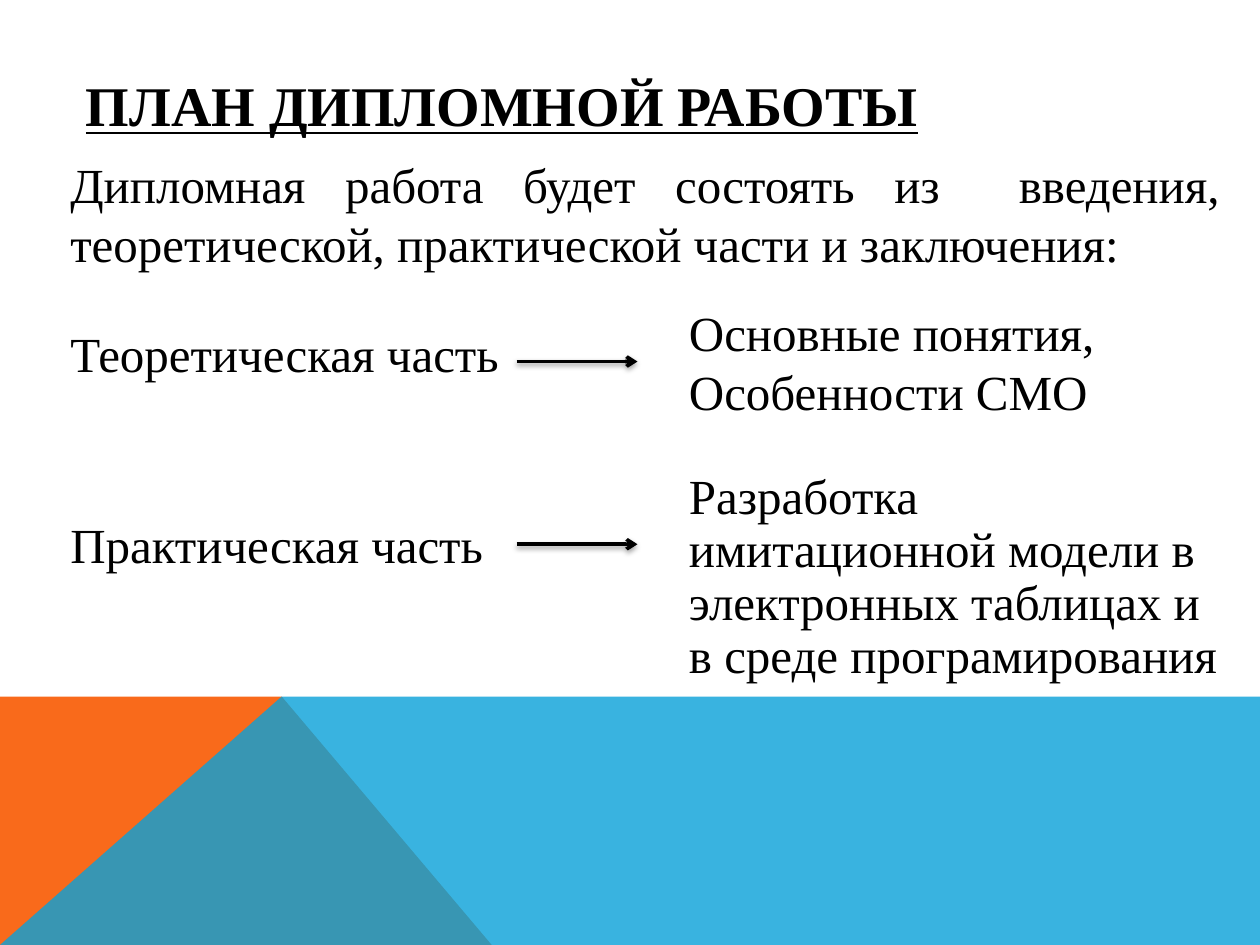
from lxml.etree import SubElement
from pptx import Presentation
from pptx.dml.color import RGBColor
from pptx.enum.shapes import MSO_CONNECTOR as CONNECTOR
from pptx.enum.text import MSO_ANCHOR as ANCHOR, MSO_AUTO_SIZE as AUTO_SIZE, PP_ALIGN as ALIGN
from pptx.oxml.ns import qn
from pptx.util import Pt

COLORS = {"text": "000000", "orange": "F96A1B", "blue": "08A1D9"}
FONT = "Times New Roman"
WIDTH, HEIGHT = 720, 540
BAND_TOP, PEAK_X = 397.5, 160.7
LEFT_X, RIGHT_X = 33.1, 386.6
ARROW_START, ARROW_END = 295.2, 364.3


def color(name):
    return RGBColor.from_string(COLORS[name])


def add_polygon(slide, points, fill, opacity=100):
    builder = slide.shapes.build_freeform(*points[0], scale=Pt(1))
    builder.add_line_segments(points[1:], close=True)
    shape = builder.convert_to_shape()
    shape.shadow.inherit = False
    shape.line.fill.background()
    shape.fill.solid()
    shape.fill.fore_color.rgb = color(fill)
    if opacity < 100:
        fill_color = shape.fill._xPr.find(qn("a:solidFill"))[0]
        SubElement(fill_color, qn("a:alpha"), val=str(opacity * 1000))


def place_text(shape, text, box, size=28, align=ALIGN.LEFT, spacing=None, anchor=ANCHOR.TOP):
    shape.left, shape.top, shape.width, shape.height = map(Pt, box)
    frame = shape.text_frame
    frame.text = text
    frame.word_wrap = True
    frame.auto_size = AUTO_SIZE.NONE
    frame.vertical_anchor = anchor
    paragraph = frame.paragraphs[0]
    paragraph.alignment = align
    if spacing:
        paragraph.line_spacing = spacing
    font = paragraph.runs[0].font
    font.name, font.size = FONT, Pt(size)
    font.color.rgb = color("text")
    return font


def add_text(slide, text, box, **options):
    place_text(slide.shapes.add_textbox(0, 0, 0, 0), text, box, **options)


def add_arrow(slide, y):
    arrow = slide.shapes.add_connector(
        CONNECTOR.STRAIGHT, Pt(ARROW_START), Pt(y), Pt(ARROW_END), Pt(y))
    arrow.line.width = Pt(2)
    arrow.line.color.rgb = color("text")
    SubElement(arrow.line._get_or_add_ln(), qn("a:tailEnd"), type="arrow")
    # Soft shadow straight below the line
    effects = SubElement(arrow._element.spPr, qn("a:effectLst"))
    shadow = SubElement(effects, qn("a:outerShdw"), blurRad=str(Pt(3.1)),
                        dist=str(Pt(1.6)), dir="5400000", rotWithShape="0")
    shadow_color = SubElement(shadow, qn("a:srgbClr"), val=COLORS["text"])
    SubElement(shadow_color, qn("a:alpha"), val="38000")


def main():
    presentation = Presentation()
    presentation.slide_width, presentation.slide_height = Pt(WIDTH), Pt(HEIGHT)
    slide = presentation.slides.add_slide(presentation.slide_layouts[5])

    # Bottom band
    peak = (PEAK_X, BAND_TOP)
    add_polygon(slide, [(0, HEIGHT), (0, BAND_TOP), peak, (281.2, HEIGHT)], "orange")
    add_polygon(slide, [(0, HEIGHT), peak, (WIDTH, BAND_TOP), (WIDTH, HEIGHT)], "blue", 80)

    # Title and introduction
    title_font = place_text(slide.shapes.title, "ПЛАН ДИПЛОМНОЙ РАБОТЫ",
                            (41.8, 36.7, 609, 46), size=32, anchor=ANCHOR.MIDDLE)
    title_font.bold = title_font.underline = True
    add_text(slide, "Дипломная работа будет состоять из  введения, "
             "теоретической, практической части и заключения:",
             (LEFT_X, 85, 671, 108.7), align=ALIGN.JUSTIFY)

    # Theoretical part
    add_text(slide, "Теоретическая часть", (LEFT_X, 181.4, 332, 41))
    add_arrow(slide, 206.6)
    add_text(slide, "Основные понятия, Особенности СМО", (RIGHT_X, 169.2, 301, 75))

    # Practical part
    add_text(slide, "Практическая часть", (LEFT_X, 290.2, 277.2, 41))
    add_arrow(slide, 311)
    add_text(slide, "Разработка имитационной модели в электронных таблицах "
             "и в среде програмирования", (RIGHT_X, 266.4, 317.5, 130.3), spacing=0.9)

    presentation.save("out.pptx")


if __name__ == "__main__":
    main()
